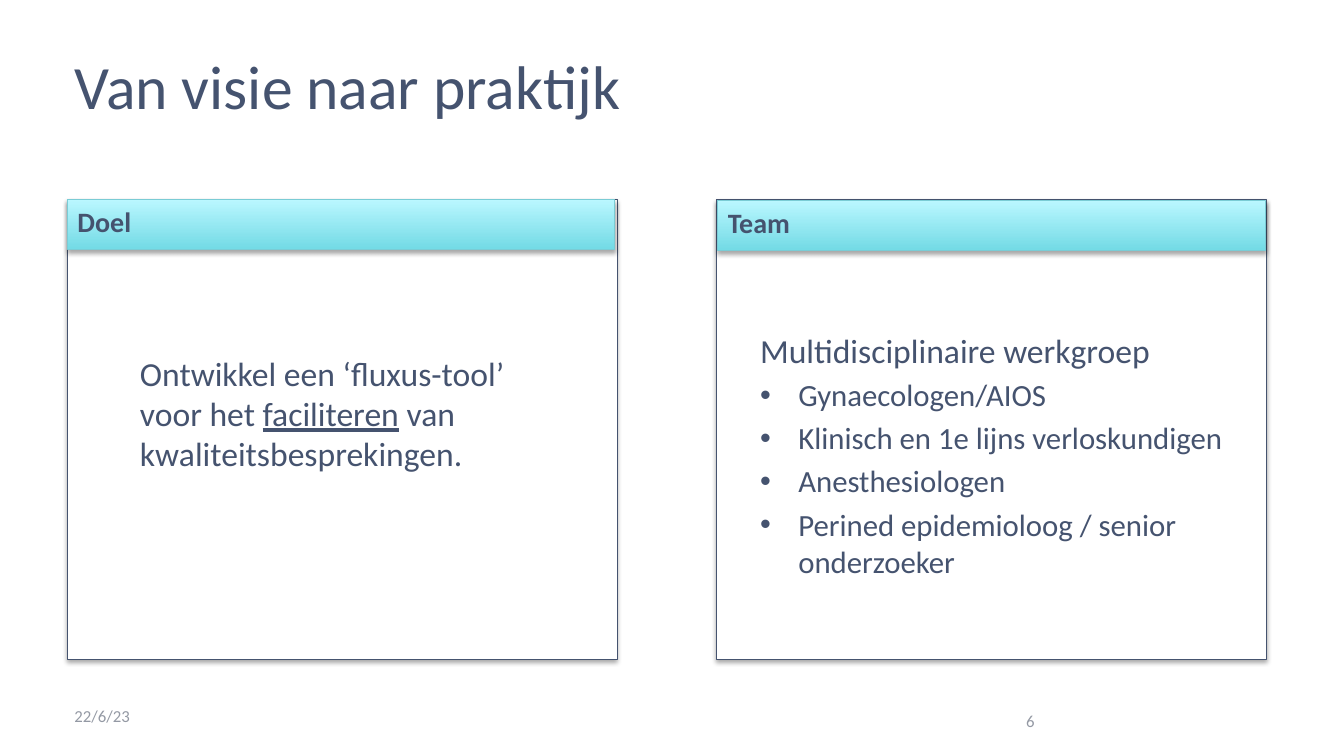
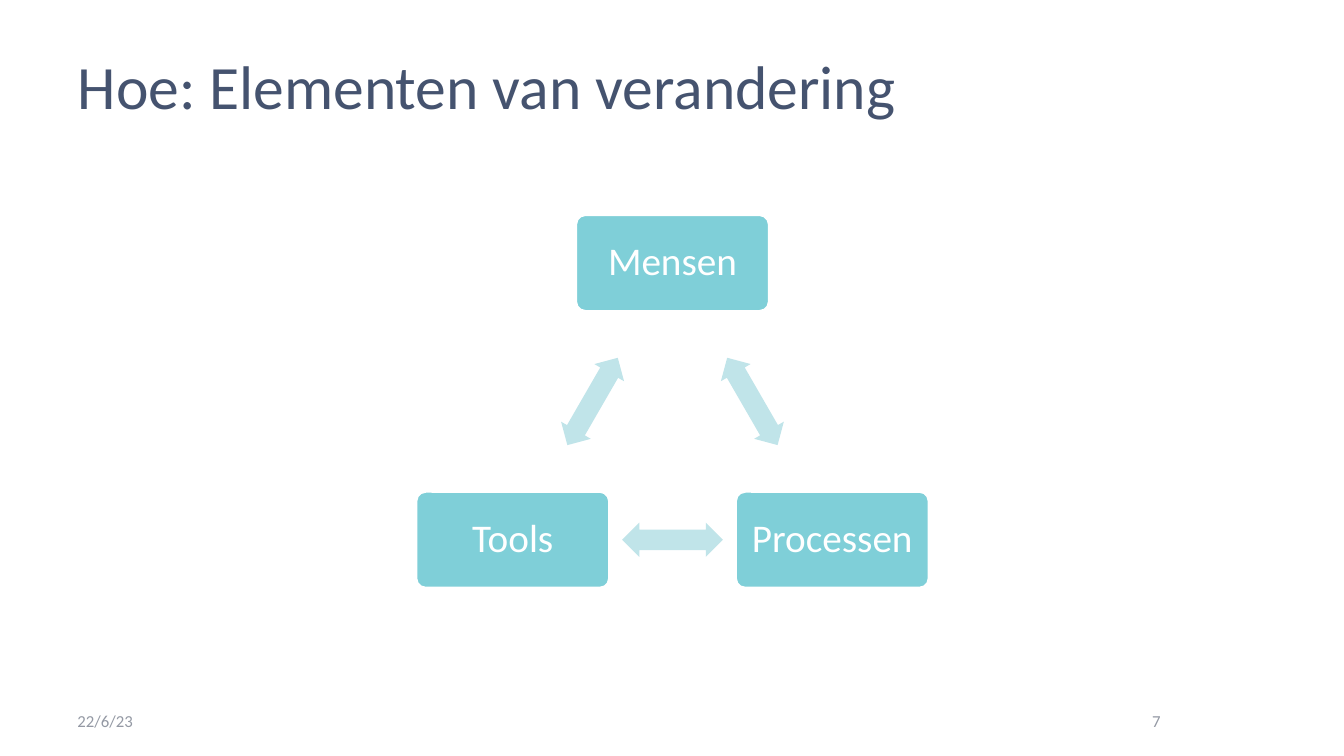
from math import atan2, cos, degrees, radians, sin
from lxml import etree
from pptx import Presentation
from pptx.dml.color import RGBColor
from pptx.enum.shapes import MSO_SHAPE
from pptx.enum.text import MSO_ANCHOR, MSO_AUTO_SIZE, PP_ALIGN
from pptx.oxml import parse_xml
from pptx.oxml.ns import nsdecls, qn
from pptx.util import Inches, Pt

RECT, ROUND = MSO_SHAPE.RECTANGLE, MSO_SHAPE.ROUNDED_RECTANGLE
ARROW = MSO_SHAPE.LEFT_RIGHT_ARROW
TOP, MIDDLE = MSO_ANCHOR.TOP, MSO_ANCHOR.MIDDLE
LEFT, CENTER, RIGHT = PP_ALIGN.LEFT, PP_ALIGN.CENTER, PP_ALIGN.RIGHT
NO_FIT = MSO_AUTO_SIZE.NONE

NAVY = RGBColor(0x45, 0x53, 0x6F)
GREY = RGBColor(0x94, 0x99, 0xA4)
WHITE = RGBColor(0xFF, 0xFF, 0xFF)
AQUA = RGBColor(0x72, 0xDA, 0xE5)
PALE = RGBColor(0xBA, 0xF7, 0xFF)
EDGE = RGBColor(0x7A, 0xCC, 0xD5)
TEAL = RGBColor(0x7F, 0xCF, 0xD8)
MIST = RGBColor(0xC0, 0xE4, 0xE9)
FONT = "Calibri"

# Content: boxes are left, top, width, height in inches
DATE = "22/6/23"
VISION = {
    "title": ("Van visie naar praktijk", (0.64, 0.43, 10.52, 1.12)),
    "date": (0.64, 6.9, 2.33, 0.4),
    "page": ("6", (8.83, 6.95, 1.53, 0.4)),
}
CHANGE = {
    "title": ("Hoe: Elementen van verandering", (0.67, 0.43, 12, 1.12)),
    "date": (0.67, 6.95, 3.11, 0.4),
    "page": ("7", (9.56, 6.95, 2.05, 0.4)),
}
# Panels: heading, left edge, heading offset, text box, paragraphs
# Each paragraph: bulleted, size, runs of (text, underlined)
PANELS = [
    ("Doel", 0.67, 0, (1.29, 3.45, 4.2, 1.21), [
        (False, 24, [("Ontwikkel een ‘fluxus-tool’ voor het ", False),
                     ("faciliteren", True),
                     (" van kwaliteitsbesprekingen.", False)]),
    ]),
    ("Team", 7.11, 0.01, (7.44, 3.22, 5.43, 2.97), [
        (False, 24, [("Multidisciplinaire werkgroep", False)]),
        (True, 22, [("Gynaecologen/AIOS", False)]),
        (True, 22, [("Klinisch en 1e lijns verloskundigen", False)]),
        (True, 22, [("Anesthesiologen", False)]),
        (True, 22, [("Perined epidemioloog / senior onderzoeker", False)]),
    ]),
]
PARTS = ["Mensen", "Processen", "Tools"]


def place(box):
    return [Inches(n) for n in box]


def style(run, size, color, **more):
    look = {"name": FONT, "size": Pt(size), **more}
    for key, val in look.items():
        setattr(run.font, key, val)
    run.font.color.rgb = color


def frame(shape, anchor=TOP):
    body = shape.text_frame
    look = {"word_wrap": True, "auto_size": NO_FIT, "vertical_anchor": anchor}
    for key, val in look.items():
        setattr(body, key, val)
    return body


def write(shape, text, size, color, align=LEFT, anchor=TOP, **more):
    para = frame(shape, anchor).paragraphs[0]
    para.alignment = align
    run = para.add_run()
    run.text = text
    style(run, size, color, **more)
    return para


def draw(slide, kind, box, fill, line=None, width=0.75):
    """Draw a shape; a list of two colours as fill makes a gradient."""
    shape = slide.shapes.add_shape(kind, *place(box))
    shape.shadow.inherit = False
    if isinstance(fill, list):
        shape.fill.gradient()
        shape.fill.gradient_angle = 90
        for stop, color in zip(shape.fill.gradient_stops, fill):
            stop.color.rgb = color
    else:
        shape.fill.solid()
        shape.fill.fore_color.rgb = fill
    if line is None:
        shape.line.fill.background()
    else:
        shape.line.color.rgb = line
        shape.line.width = Pt(width)
    return shape


def shade(shape):
    effect = shape._element.spPr.find(qn("a:effectLst"))
    effect.append(parse_xml(
        f'<a:outerShdw {nsdecls("a")} blurRad="40000" dist="23000" '
        'dir="5400000" rotWithShape="0"><a:srgbClr val="000000">'
        '<a:alpha val="35000"/></a:srgbClr></a:outerShdw>'))


def bullet(para):
    props = para._p.get_or_add_pPr()
    props.set("marL", str(Inches(0.38)))
    props.set("indent", str(-Inches(0.38)))
    etree.SubElement(props, qn("a:buFont")).set("typeface", "Arial")
    etree.SubElement(props, qn("a:buChar")).set("char", "•")


def start(deck, data):
    """Add a slide with its title, date and page number."""
    slide = deck.slides.add_slide(deck.slide_layouts[5])
    text, box = data["title"]
    title = slide.shapes.title
    title.left, title.top, title.width, title.height = place(box)
    write(title, text, 44, NAVY)
    page, spot = data["page"]
    for note, area, align in ((DATE, data["date"], LEFT), (page, spot, RIGHT)):
        foot = slide.shapes.add_textbox(*place(area))
        write(foot, note, 12, GREY, align, MIDDLE)
    return slide


def vision(deck):
    slide = start(deck, VISION)
    for head, left, shift, box, paras in PANELS:
        # Panel with its heading band
        shade(draw(slide, RECT, (left, 1.98, 5.45, 4.56), WHITE, NAVY))
        band = draw(slide, RECT, (left + shift, 1.98 + shift, 5.43, 0.5),
                    [AQUA, PALE], EDGE)
        shade(band)
        write(band, head, 20, NAVY, bold=True)
        # Panel text
        body = frame(slide.shapes.add_textbox(*place(box)))
        for i, (dot, size, runs) in enumerate(paras):
            para = body.add_paragraph() if i else body.paragraphs[0]
            if dot:
                bullet(para)
            if i:
                para.space_before = Pt(size * 0.2)
            for text, under in runs:
                run = para.add_run()
                run.text = text
                style(run, size, NAVY, underline=under)


def change(deck):
    slide = start(deck, CHANGE)
    # Corners of an equilateral triangle, clockwise from the top
    turns = [radians(120 * i - 90) for i in range(len(PARTS))]
    spots = [(6.67 + 1.83 * cos(t), 4.44 + 1.83 * sin(t)) for t in turns]
    wide, high = 1.92, 0.96
    for part, (x, y) in zip(PARTS, spots):
        card = draw(slide, ROUND, (x - wide / 2, y - high / 2, wide, high),
                    TEAL, WHITE, 2)
        card.adjustments[0] = 0.1
        para = write(card, part, 28, WHITE, CENTER, MIDDLE)
        para.line_spacing = 0.9
    # Arrows halfway along each side
    long, thick = 1, 0.34
    for (x1, y1), (x2, y2) in zip(spots, spots[1:] + spots[:1]):
        x, y = (x1 + x2) / 2, (y1 + y2) / 2
        arrow = draw(slide, ARROW,
                     (x - long / 2, y - thick / 2, long, thick), MIST)
        arrow.adjustments[0], arrow.adjustments[1] = 0.6, 0.5
        arrow.rotation = round(degrees(atan2(y2 - y1, x2 - x1))) % 360


def main():
    deck = Presentation()
    deck.slide_width, deck.slide_height = Inches(13.33), Inches(7.5)
    vision(deck)
    change(deck)
    deck.save("out.pptx")


if __name__ == "__main__":
    main()
